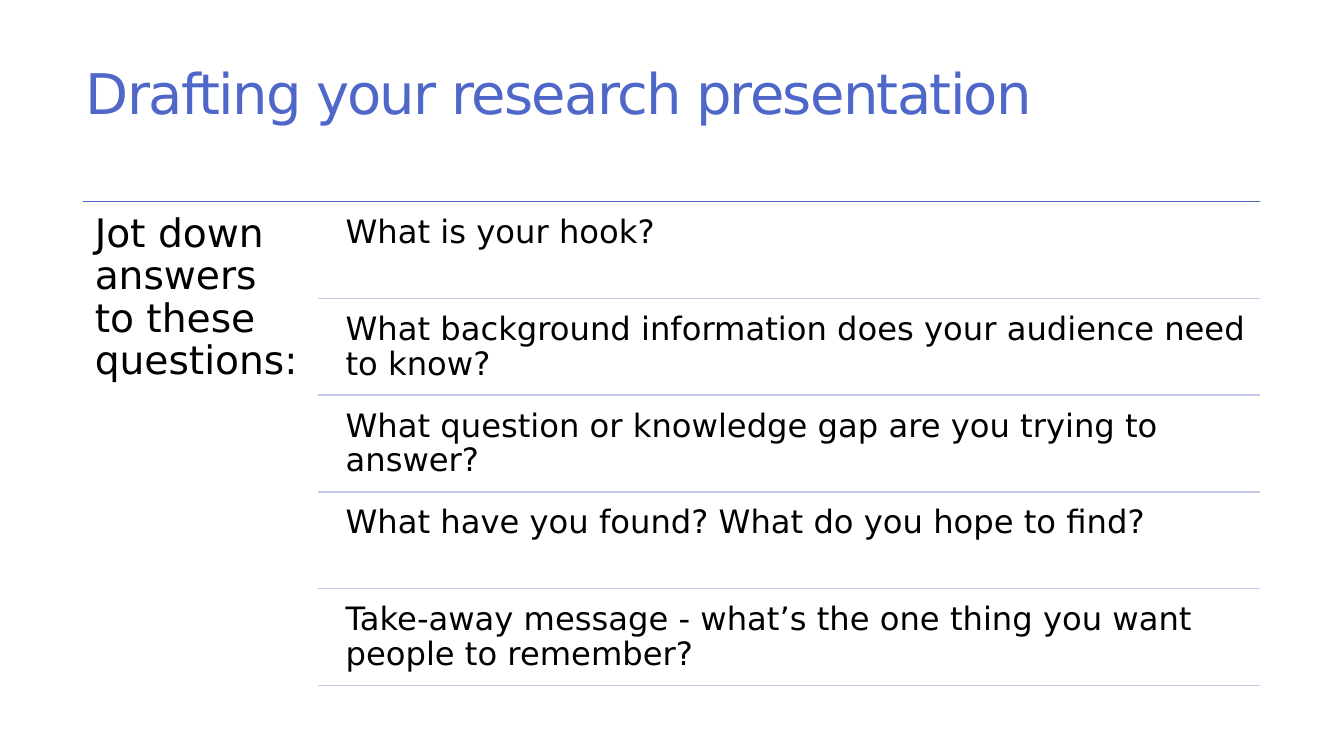
import pptx
import pptx.dml.color
import pptx.enum.shapes
import pptx.enum.text
import pptx.oxml
import pptx.oxml.ns
import pptx.util

Inches, Pt = pptx.util.Inches, pptx.util.Pt
COLORS = {"accent": "4E67C8", "divider": "C2C7E6", "text": "000000"}
FONT = "DejaVu Sans"

QUESTIONS = [
    "What is your hook?",
    "What background information does your audience need to know?",
    "What question or knowledge gap are you trying to answer?",
    "What have you found? What do you hope to find?",
    "Take-away message - what’s the one thing you want people to remember?",
]

# Grid: a prompt column on the left, question rows on the right
LEFT, RIGHT, TOP = 0.82, 12.5, 2
DIVIDER_LEFT, QUESTION_LEFT = 3.15, 3.33
ROW, ROW_GAP = 0.96, 0.04


def write(shape, text, size, color, inset, line_spacing):
    frame = shape.text_frame
    frame.text = text
    frame.word_wrap = True
    frame.auto_size = pptx.enum.text.MSO_AUTO_SIZE.NONE
    frame.vertical_anchor = pptx.enum.text.MSO_ANCHOR.TOP
    frame.margin_left = frame.margin_right = Inches(inset)
    frame.margin_top = frame.margin_bottom = Inches(inset)
    paragraph = frame.paragraphs[0]
    paragraph.alignment = pptx.enum.text.PP_ALIGN.LEFT
    paragraph.line_spacing = line_spacing
    font = paragraph.runs[0].font
    font.name, font.size = FONT, Pt(size)
    font.color.rgb = pptx.dml.color.RGBColor.from_string(COLORS[color])


def rule(left, y, color):
    line = slide.shapes.add_connector(
        pptx.enum.shapes.MSO_CONNECTOR.STRAIGHT,
        Inches(left), Inches(y), Inches(RIGHT), Inches(y))
    line.line.color.rgb = pptx.dml.color.RGBColor.from_string(COLORS[color])
    line.line.width = Pt(1)
    line._element.spPr.append(pptx.oxml.parse_xml(
        f'<a:effectLst {pptx.oxml.ns.nsdecls("a")}/>'))


presentation = pptx.Presentation()
presentation.slide_width = Inches(13.33)
presentation.slide_height = Inches(7.5)
slide = presentation.slides.add_slide(presentation.slide_layouts[5])

# Title
title = slide.shapes.title
title.left, title.top = Inches(0.72), Inches(0.55)
title.width, title.height = Inches(11.78), Inches(1.03)
write(title, "Drafting your research presentation", 40, "accent", 0.13, 0.85)
title_run = title.text_frame.paragraphs[0].runs[0]
title_run._r.get_or_add_rPr().set("spc", "-120")

# Prompt column under the top rule
rule(LEFT, TOP, "accent")
prompt = slide.shapes.add_textbox(
    Inches(LEFT), Inches(TOP), Inches(2.34), Inches(4.85))
write(prompt, "Jot down answers to these questions:", 28, "text", 0.12, 0.9)

# Question rows, each closed by a divider
for row, wording in enumerate(QUESTIONS):
    row_top = TOP + row * ROW
    question = slide.shapes.add_textbox(
        Inches(QUESTION_LEFT), Inches(row_top + ROW_GAP),
        Inches(RIGHT - QUESTION_LEFT), Inches(ROW - ROW_GAP))
    write(question, wording, 23, "text", 0.1, 0.9)
    rule(DIVIDER_LEFT, row_top + ROW, "divider")

presentation.save("out.pptx")
